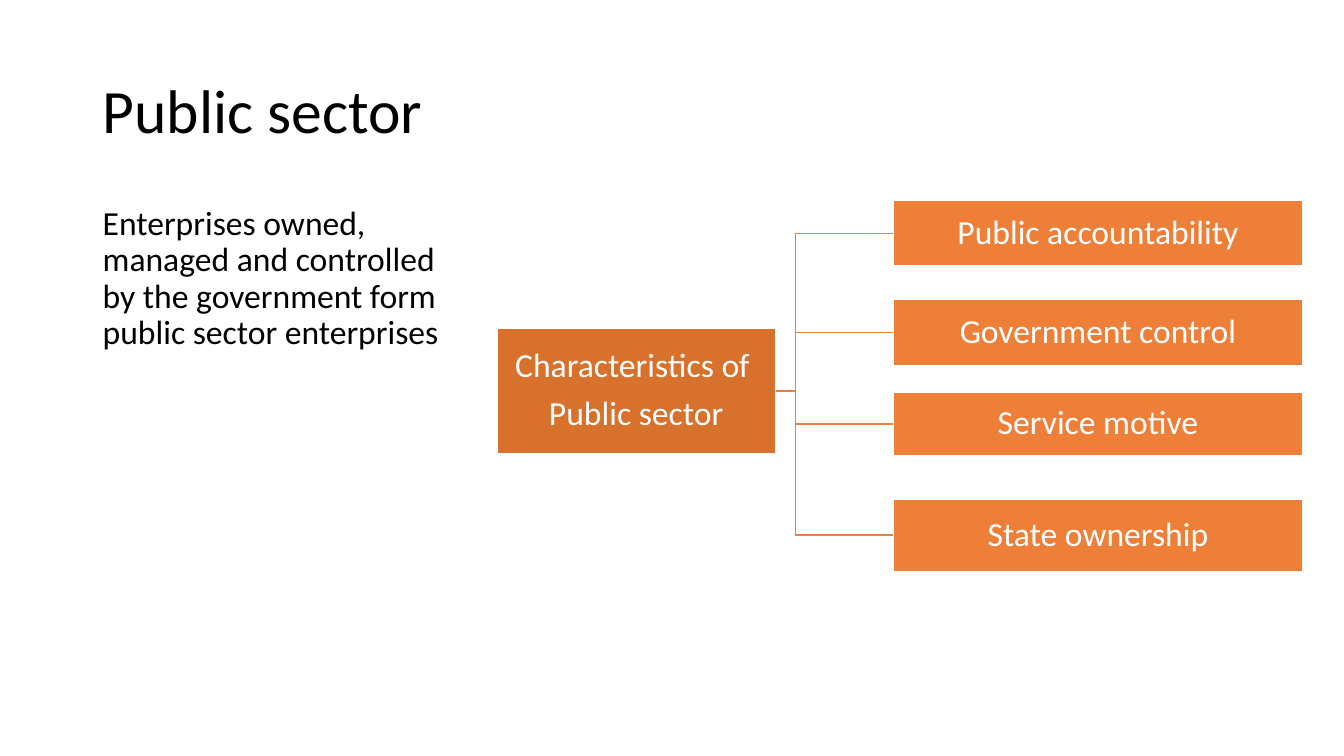
"""Build the public sector slide with its characteristics tree."""

from typing import NamedTuple

from pptx import Presentation
from pptx.dml.color import RGBColor
from pptx.enum.shapes import MSO_SHAPE
from pptx.enum.text import MSO_ANCHOR, PP_ALIGN
from pptx.shapes.autoshape import Shape
from pptx.slide import Slide
from pptx.util import Inches, Pt

BLACK = RGBColor(0x00, 0x00, 0x00)
WHITE = RGBColor(0xFF, 0xFF, 0xFF)
ORANGE = RGBColor(0xED, 0x7F, 0x39)
DARK_ORANGE = RGBColor(0xD7, 0x71, 0x2C)
FONT = "Calibri"
TEXT_LEFT, TEXT_WIDTH = 0.92, 3.71
BRANCH_LEFT, BRANCH_WIDTH = 8.86, 4.06
STEM_LEFT, STEM_X = 6.93, 7.89


class Node(NamedTuple):
    """A filled box of the tree, in inches."""

    lines: tuple[str, ...]
    left: float
    top: float
    width: float
    height: float
    fill: RGBColor = ORANGE

    @property
    def middle(self) -> float:
        """Return the vertical centre."""
        return self.top + self.height / 2


class Label(NamedTuple):
    """A plain text block, in inches."""

    text: str
    top: float
    height: float
    size: int
    space_before: int
    anchor: MSO_ANCHOR


ROOT = Node(("Characteristics of ", "Public sector"), 4.93, 3.26, 2.76, 1.24, DARK_ORANGE)
BRANCHES = [
    Node((text,), BRANCH_LEFT, top, BRANCH_WIDTH, height)
    for text, top, height in (
        ("Public accountability", 1.99, 0.65),
        ("Government control", 2.97, 0.66),
        ("Service motive", 3.89, 0.63),
        ("State ownership", 4.95, 0.72),
    )
]
LABELS = [
    Label("Public sector", 0.4, 1.45, 44, 0, MSO_ANCHOR.MIDDLE),
    Label(
        "Enterprises owned, managed and controlled by the government form public sector enterprises",
        2, 2.15, 24, 10, MSO_ANCHOR.TOP,
    ),
]


def write_lines(
    box: Shape, lines: tuple[str, ...], size: int, color: RGBColor,
    align: PP_ALIGN, before: float = 0, after: float = 0,
) -> None:
    """Write one paragraph per line into a box."""
    frame = box.text_frame
    frame.word_wrap = True
    for index, line in enumerate(lines):
        para = frame.add_paragraph() if index else frame.paragraphs[0]
        para.alignment = align
        para.line_spacing = 0.9
        para.space_before, para.space_after = Pt(before), Pt(after)
        span = para.add_run()
        span.text = line
        span.font.name = FONT
        span.font.size = Pt(size)
        span.font.color.rgb = color


def add_label(page: Slide, label: Label) -> None:
    """Add a text block in the left column."""
    box = page.shapes.add_textbox(
        Inches(TEXT_LEFT), Inches(label.top), Inches(TEXT_WIDTH), Inches(label.height)
    )
    box.text_frame.vertical_anchor = label.anchor
    write_lines(box, (label.text,), label.size, BLACK, PP_ALIGN.LEFT, label.space_before)


def add_node(page: Slide, node: Node) -> None:
    """Add a filled box with centred text."""
    box = page.shapes.add_shape(
        MSO_SHAPE.RECTANGLE,
        Inches(node.left), Inches(node.top), Inches(node.width), Inches(node.height),
    )
    box.shadow.inherit = False
    box.fill.solid()
    box.fill.fore_color.rgb = node.fill
    box.line.color.rgb = WHITE
    box.line.width = Pt(1)
    frame = box.text_frame
    frame.vertical_anchor = MSO_ANCHOR.MIDDLE
    frame.margin_left = frame.margin_right = Inches(0.02)
    frame.margin_top = frame.margin_bottom = Inches(0.02)
    write_lines(box, node.lines, 24, WHITE, PP_ALIGN.CENTER, after=8.4)


def add_link(page: Slide, root: Node, branch: Node) -> None:
    """Draw the elbow line from the root to a branch."""
    corners = [
        (Inches(x), Inches(y))
        for x, y in (
            (STEM_X, root.middle), (STEM_X, branch.middle), (branch.left, branch.middle)
        )
    ]
    builder = page.shapes.build_freeform(Inches(STEM_LEFT), Inches(root.middle))
    builder.add_line_segments(corners, close=False)
    link = builder.convert_to_shape()
    link.shadow.inherit = False
    link.fill.background()
    link.line.color.rgb = ORANGE
    link.line.width = Pt(1)


def main() -> None:
    """Build and save the deck."""
    deck = Presentation()
    deck.slide_width, deck.slide_height = Inches(13.33), Inches(7.5)
    page = deck.slides.add_slide(deck.slide_layouts[6])
    for label in LABELS:
        add_label(page, label)
    for branch in reversed(BRANCHES):
        add_link(page, ROOT, branch)
    for node in (ROOT, *BRANCHES):
        add_node(page, node)
    deck.save("out.pptx")


if __name__ == "__main__":
    main()
